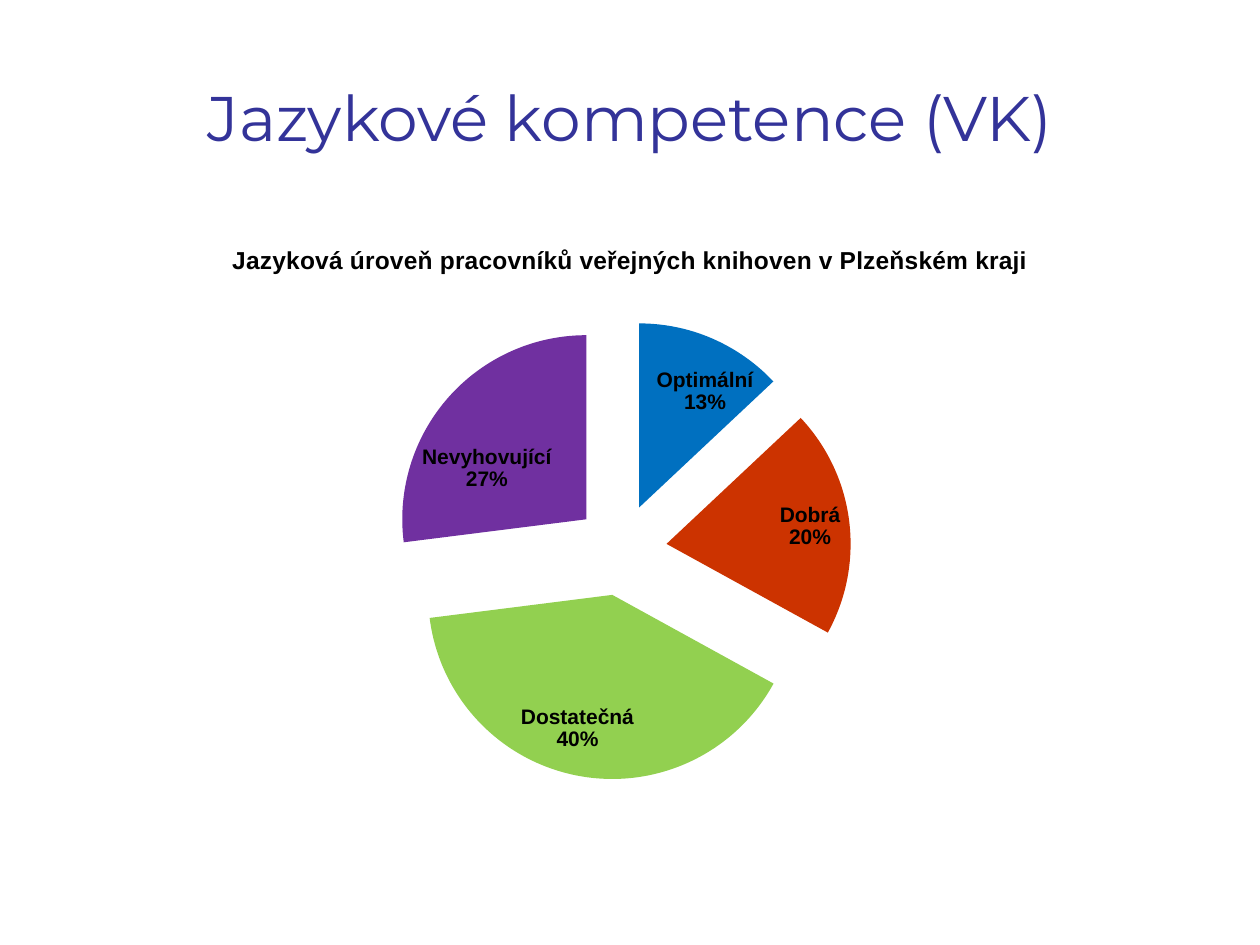
from lxml import etree
from pptx import Presentation
from pptx.chart.data import CategoryChartData
from pptx.dml.color import RGBColor
from pptx.enum.chart import XL_CHART_TYPE, XL_LABEL_POSITION
from pptx.enum.text import MSO_ANCHOR, PP_ALIGN
from pptx.oxml.ns import qn
from pptx.util import Inches, Pt

COLORS = {
    "title": "333399",
    "text": "000000",
    "Optimální": "0070C0",
    "Dobrá": "CC3300",
    "Dostatečná": "92D050",
    "Nevyhovující": "7030A0",
}
LEVELS = {"Optimální": 13, "Dobrá": 20, "Dostatečná": 40, "Nevyhovující": 27}
PLOT_AREA = {"x": 0.079, "y": 0.159, "w": 0.826, "h": 0.738}


def format_font(font, size, color="text", name="Arial", bold=False):
    font.name = name
    font.size = Pt(size)
    font.bold = bold
    font.color.rgb = RGBColor.from_string(COLORS[color])


def write_text(frame, text, align=PP_ALIGN.CENTER, **style):
    paragraph = frame.paragraphs[0]
    paragraph.alignment = align
    span = paragraph.add_run()
    span.text = text
    format_font(span.font, **style)


class SlideBuilder:
    def __init__(self, deck):
        self.page = deck.slides.add_slide(deck.slide_layouts[5])

    def title(self, text, left, top, width, height):
        box = self.page.shapes.title
        box.left, box.top = Inches(left), Inches(top)
        box.width, box.height = Inches(width), Inches(height)
        box.text_frame.vertical_anchor = MSO_ANCHOR.MIDDLE
        write_text(box.text_frame, text, size=36, color="title", name="Montserrat")

    def pie(self, heading, values, left, top, width, height, explosion):
        data = CategoryChartData()
        data.categories = list(values)
        data.add_series("Series 1", list(values.values()))
        chart = self.page.shapes.add_chart(
            XL_CHART_TYPE.PIE, Inches(left), Inches(top),
            Inches(width), Inches(height), data,
        ).chart
        format_font(chart.font, 10)
        chart.has_legend = False
        write_text(chart.chart_title.text_frame, heading, size=14, bold=True)
        chart.chart_title.include_in_layout = False

        plot = chart.plots[0]
        plot.vary_by_categories = True
        series = plot.series[0]
        for index, level in enumerate(values):
            fill = series.points[index].format.fill
            fill.solid()
            fill.fore_color.rgb = RGBColor.from_string(COLORS[level])
        self.explode(series, explosion)
        self.label(series.data_labels)
        self.place_plot(chart)

    def label(self, labels):
        labels.show_category_name = True
        labels.show_percentage = True
        labels.show_value = False
        labels.number_format = "0%"
        labels.number_format_is_linked = False
        labels.position = XL_LABEL_POSITION.BEST_FIT
        format_font(labels.font, 12, bold=True)
        separator = etree.Element(qn("c:separator"))
        separator.text = "\n"
        labels._element.find(qn("c:showBubbleSize")).addnext(separator)

    def explode(self, series, amount):
        explosion = etree.Element(qn("c:explosion"), val=str(amount))
        series._element.find(qn("c:dPt")).addprevious(explosion)

    def place_plot(self, chart):
        area = chart._chartSpace.chart.plotArea
        for old in area.findall(qn("c:layout")):
            area.remove(old)
        layout = etree.Element(qn("c:layout"))
        area.insert(0, layout)
        manual = etree.SubElement(layout, qn("c:manualLayout"))
        settings = {"layoutTarget": "inner", "xMode": "edge", "yMode": "edge"}
        for tag, value in (settings | PLOT_AREA).items():
            etree.SubElement(manual, qn(f"c:{tag}"), val=str(value))


def main():
    deck = Presentation()
    deck.slide_width, deck.slide_height = Inches(10), Inches(7.5)
    slide = SlideBuilder(deck)
    slide.title("Jazykové kompetence (VK)", 0.5, 0.3, 9, 1.25)
    slide.pie(
        "Jazyková úroveň pracovníků veřejných knihoven v Plzeňském kraji",
        LEVELS, 0.5, 1.75, 9, 4.95, explosion=25,
    )
    deck.save("out.pptx")


if __name__ == "__main__":
    main()
